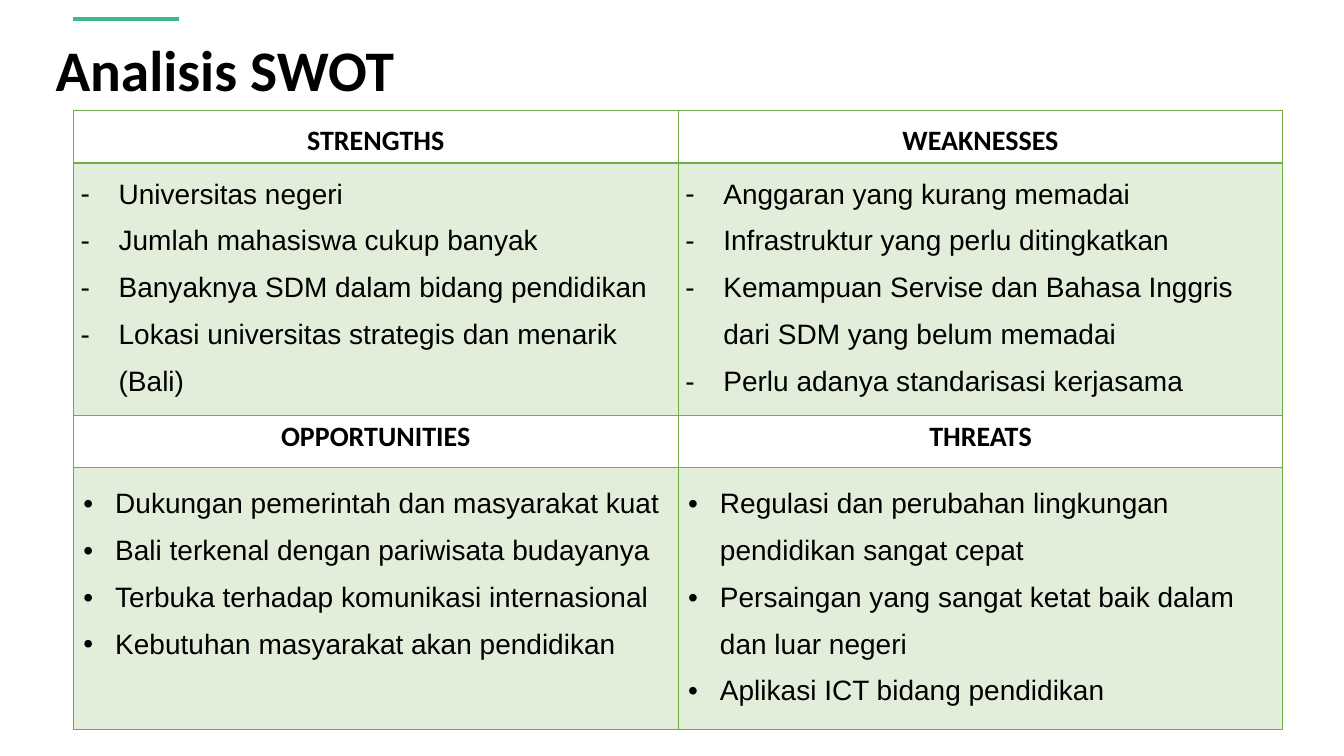
from lxml import etree
from pptx import Presentation
from pptx.dml.color import RGBColor
from pptx.enum.shapes import MSO_CONNECTOR
from pptx.enum.text import MSO_ANCHOR, PP_ALIGN
from pptx.oxml.ns import qn
from pptx.util import Cm, Pt

STRAIGHT = MSO_CONNECTOR.STRAIGHT
MIDDLE = MSO_ANCHOR.MIDDLE
CENTER = PP_ALIGN.CENTER
BLACK, GREEN, TEAL = "000000", "70AD47", "3BB791"
BODY_OPACITY = 20
COLUMN_WIDTH = 15.24
ROW_HEIGHTS = (1.32, 6.35, 1.32, 6.6)

HEADINGS = (("STRENGTHS", "WEAKNESSES"), ("OPPORTUNITIES", "THREATS"))
POINTS = (
    (
        (
            "Universitas negeri",
            "Jumlah mahasiswa cukup banyak",
            "Banyaknya SDM dalam bidang pendidikan",
            "Lokasi universitas strategis dan menarik (Bali)",
        ),
        (
            "Anggaran yang kurang memadai",
            "Infrastruktur yang perlu ditingkatkan",
            "Kemampuan Servise dan Bahasa Inggris dari SDM yang belum memadai",
            "Perlu adanya standarisasi kerjasama",
        ),
    ),
    (
        (
            "Dukungan pemerintah dan masyarakat kuat",
            "Bali terkenal dengan pariwisata budayanya",
            "Terbuka terhadap komunikasi internasional",
            "Kebutuhan masyarakat akan pendidikan",
        ),
        (
            "Regulasi dan perubahan lingkungan pendidikan sangat cepat",
            "Persaingan yang sangat ketat baik dalam dan luar negeri",
            "Aplikasi ICT bidang pendidikan",
        ),
    ),
)
BULLETS = (("-", 0.96), ("•", 0.8))


def color(hex_text):
    """Return the colour for a hex string."""
    return RGBColor.from_string(hex_text)


def set_font(paragraph, name, size, bold=False):
    """Set the black font of a paragraph."""
    font = paragraph.font
    font.name, font.size, font.bold = name, Pt(size), bold
    font.color.rgb = color(BLACK)


def add_title(slide, text):
    """Add the slide title."""
    box = slide.shapes.add_textbox(Cm(1.07), Cm(0.71), Cm(29.9), Cm(2.08))
    frame = box.text_frame
    frame.word_wrap = True
    frame.margin_left = frame.margin_right = Cm(0.33)
    frame.margin_top = frame.margin_bottom = Cm(0.16)
    frame.text = text
    set_font(frame.paragraphs[0], "Calibri", 41, True)


def add_accent(slide):
    """Add the short accent line above the title."""
    line = slide.shapes.add_connector(STRAIGHT, Cm(1.85), Cm(0.48), Cm(4.5), Cm(0.48))
    line.line.color.rgb = color(TEAL)
    line.line.width = Pt(2.25)
    etree.SubElement(line._element.spPr, qn("a:effectLst"))


def set_borders(cell, heavy_sides):
    """Draw green borders round a cell, thicker on the heavy sides."""
    properties = cell._tc.get_or_add_tcPr()
    for index, side in enumerate("LRTB"):
        width = Pt(2 if side in heavy_sides else 1)
        border = etree.Element(qn(f"a:ln{side}"), w=str(width))
        fill = etree.SubElement(border, qn("a:solidFill"))
        etree.SubElement(fill, qn("a:srgbClr"), val=GREEN)
        properties.insert(index, border)


def set_bullet(paragraph, character, indent):
    """Give a paragraph a bullet with a hanging indent."""
    properties = paragraph._p.get_or_add_pPr()
    properties.set("marL", str(Cm(indent)))
    properties.set("indent", str(-Cm(indent)))
    etree.SubElement(properties, qn("a:buFont"), typeface="Arial")
    etree.SubElement(properties, qn("a:buChar"), char=character)


def tighten(cell):
    """Narrow the cell margins."""
    cell.margin_left = cell.margin_right = Cm(0.18)
    cell.margin_top = cell.margin_bottom = 0


def fill_heading(cell, text, spaced):
    """Write a centred heading, spaced out in the top row."""
    cell.text = text
    paragraph = cell.text_frame.paragraphs[0]
    paragraph.alignment = CENTER
    if spaced:
        cell.vertical_anchor = MIDDLE
        paragraph.line_spacing = 1.25
        paragraph.space_before, paragraph.space_after = Pt(12), Pt(8)
    set_font(paragraph, "Calibri", 20, True)
    cell.fill.background()


def fill_points(cell, points, bullet):
    """Write a bulleted list on a pale green cell."""
    cell.text = "\n".join(points)
    for paragraph in cell.text_frame.paragraphs:
        paragraph.line_spacing = 1.5
        set_bullet(paragraph, *bullet)
        set_font(paragraph, "Arial", 20)
    cell.fill.solid()
    cell.fill.fore_color.rgb = color(GREEN)
    tint = cell._tc.tcPr.find(qn("a:solidFill")).find(qn("a:srgbClr"))
    etree.SubElement(tint, qn("a:alpha"), val=str(BODY_OPACITY * 1000))


def add_swot_table(slide):
    """Add the table of the four SWOT quadrants."""
    frame = slide.shapes.add_table(
        4, 2, Cm(1.85), Cm(2.79), Cm(2 * COLUMN_WIDTH), Cm(sum(ROW_HEIGHTS))
    )
    table = frame.table
    table.first_row = table.horz_banding = False
    for column in table.columns:
        column.width = Cm(COLUMN_WIDTH)
    for row, height in zip(table.rows, ROW_HEIGHTS):
        row.height = Cm(height)
    for half in range(2):
        for column in range(2):
            heading = table.cell(2 * half, column)
            body = table.cell(2 * half + 1, column)
            is_top = half == 0
            fill_heading(heading, HEADINGS[half][column], is_top)
            fill_points(body, POINTS[half][column], BULLETS[half])
            set_borders(heading, "B" if is_top else "")
            set_borders(body, "T" if is_top else "")
            if is_top:
                tighten(heading)
                tighten(body)


def main():
    """Build and save the slide."""
    presentation = Presentation()
    presentation.slide_width, presentation.slide_height = Cm(33.87), Cm(19.05)
    slide = presentation.slides.add_slide(presentation.slide_layouts[6])
    add_title(slide, "Analisis SWOT")
    add_accent(slide)
    add_swot_table(slide)
    presentation.save("out.pptx")


if __name__ == "__main__":
    main()
